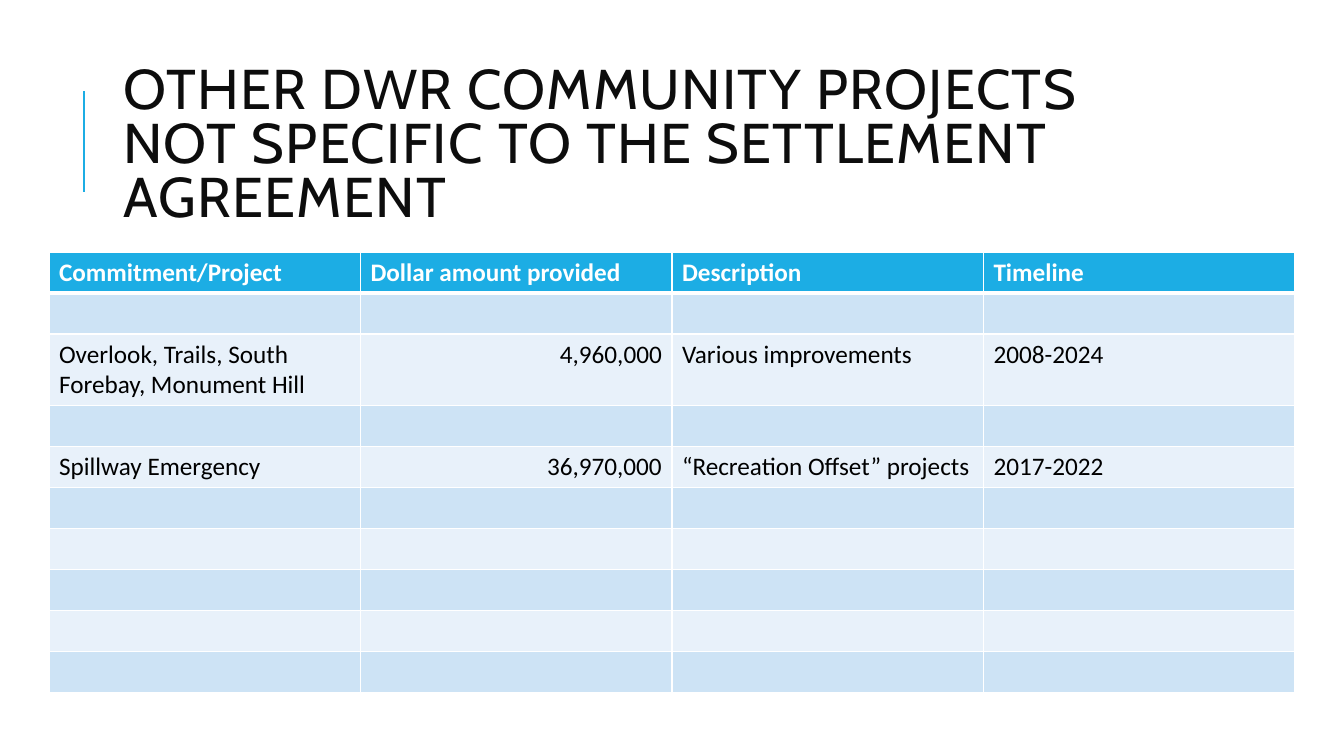
from lxml import etree
from pptx import Presentation
from pptx.dml.color import RGBColor
from pptx.enum.shapes import MSO_CONNECTOR
from pptx.enum.text import MSO_ANCHOR, MSO_AUTO_SIZE, PP_ALIGN
from pptx.oxml.ns import qn
from pptx.util import Emu, Pt

STRAIGHT = MSO_CONNECTOR.STRAIGHT
MIDDLE = MSO_ANCHOR.MIDDLE
NO_AUTOFIT = MSO_AUTO_SIZE.NONE
LEFT, RIGHT = PP_ALIGN.LEFT, PP_ALIGN.RIGHT

EMU_PER_PX = 914400 / 100.8
TITLE_ONLY_LAYOUT = 5
ACCENT, WHITE, BLACK, TITLE_INK = "1CADE4", "FFFFFF", "000000", "0D0D0D"
BANDS = ("E8F1FA", "CDE3F5")
ROW_COUNT = 10
COLUMN_WIDTH, ROW_HEIGHT = 311.5, 41

TITLE = "OTHER DWR COMMUNITY PROJECTS NOT SPECIFIC TO THE SETTLEMENT AGREEMENT"
HEADINGS = ("Commitment/Project", "Dollar amount provided", "Description", "Timeline")
AMOUNT_COLUMN = 1
PROJECTS = {
    2: ("Overlook, Trails, South Forebay, Monument Hill", "4,960,000",
        "Various improvements", "2008-2024"),
    4: ("Spillway Emergency", "36,970,000",
        "“Recreation Offset” projects", "2017-2022"),
}


def px(length):
    return Emu(round(length * EMU_PER_PX))


def color(value):
    return RGBColor.from_string(value)


def add_run(paragraph, text, font_name, size, ink, bold=False):
    run = paragraph.add_run()
    run.text = text
    run.font.name = font_name
    run.font.size = Pt(size)
    run.font.bold = bold
    run.font.color.rgb = color(ink)
    return run


def add_title(slide):
    title = slide.shapes.title
    title.left, title.top, title.width, title.height = px(113), px(65), px(1072), px(165)
    frame = title.text_frame
    frame.word_wrap = True
    frame.auto_size = NO_AUTOFIT
    frame.vertical_anchor = MIDDLE
    paragraph = frame.paragraphs[0]
    paragraph.alignment = LEFT
    paragraph.line_spacing = 0.8
    run = add_run(paragraph, TITLE, "Cabin", 40, TITLE_INK)
    # Letter spacing of one point
    run.font._element.set("spc", "100")


def add_accent_line(slide):
    line = slide.shapes.add_connector(STRAIGHT, px(84), px(192), px(84), px(91))
    line.line.color.rgb = color(ACCENT)
    line.line.width = Pt(1.5)
    etree.SubElement(line._element.spPr, qn("a:effectLst"))


def add_border(cell, side, width):
    properties = cell._tc.get_or_add_tcPr()
    border = etree.SubElement(properties, qn(f"a:ln{side}"), w=str(Pt(width)))
    fill = etree.SubElement(border, qn("a:solidFill"))
    etree.SubElement(fill, qn("a:srgbClr"), val=WHITE)


def format_cell(cell, row, column, text):
    is_header = row == 0
    # The rule under the header is thicker than the rest
    widths = {"L": 1, "R": 1, "T": 3 if row == 1 else 1, "B": 3 if is_header else 1}
    for side, width in widths.items():
        add_border(cell, side, width)
    cell.fill.solid()
    cell.fill.fore_color.rgb = color(ACCENT if is_header else BANDS[row % 2])
    if text:
        paragraph = cell.text_frame.paragraphs[0]
        is_amount = column == AMOUNT_COLUMN and not is_header
        paragraph.alignment = RIGHT if is_amount else LEFT
        add_run(paragraph, text, "Calibri", 18, WHITE if is_header else BLACK, is_header)


def add_project_table(slide):
    column_count = len(HEADINGS)
    frame = slide.shapes.add_table(
        ROW_COUNT, column_count, px(49), px(252),
        px(COLUMN_WIDTH * column_count), px(ROW_HEIGHT * ROW_COUNT))
    table = frame.table
    for table_column in table.columns:
        table_column.width = px(COLUMN_WIDTH)
    contents = {0: HEADINGS, **PROJECTS}
    for row, table_row in enumerate(table.rows):
        table_row.height = px(ROW_HEIGHT)
        texts = contents.get(row, ("",) * column_count)
        for column, text in enumerate(texts):
            format_cell(table.cell(row, column), row, column, text)


def main():
    presentation = Presentation()
    presentation.slide_width, presentation.slide_height = px(1344), px(756)
    layout = presentation.slide_layouts[TITLE_ONLY_LAYOUT]
    slide = presentation.slides.add_slide(layout)
    add_accent_line(slide)
    add_title(slide)
    add_project_table(slide)
    presentation.save("out.pptx")


if __name__ == "__main__":
    main()
